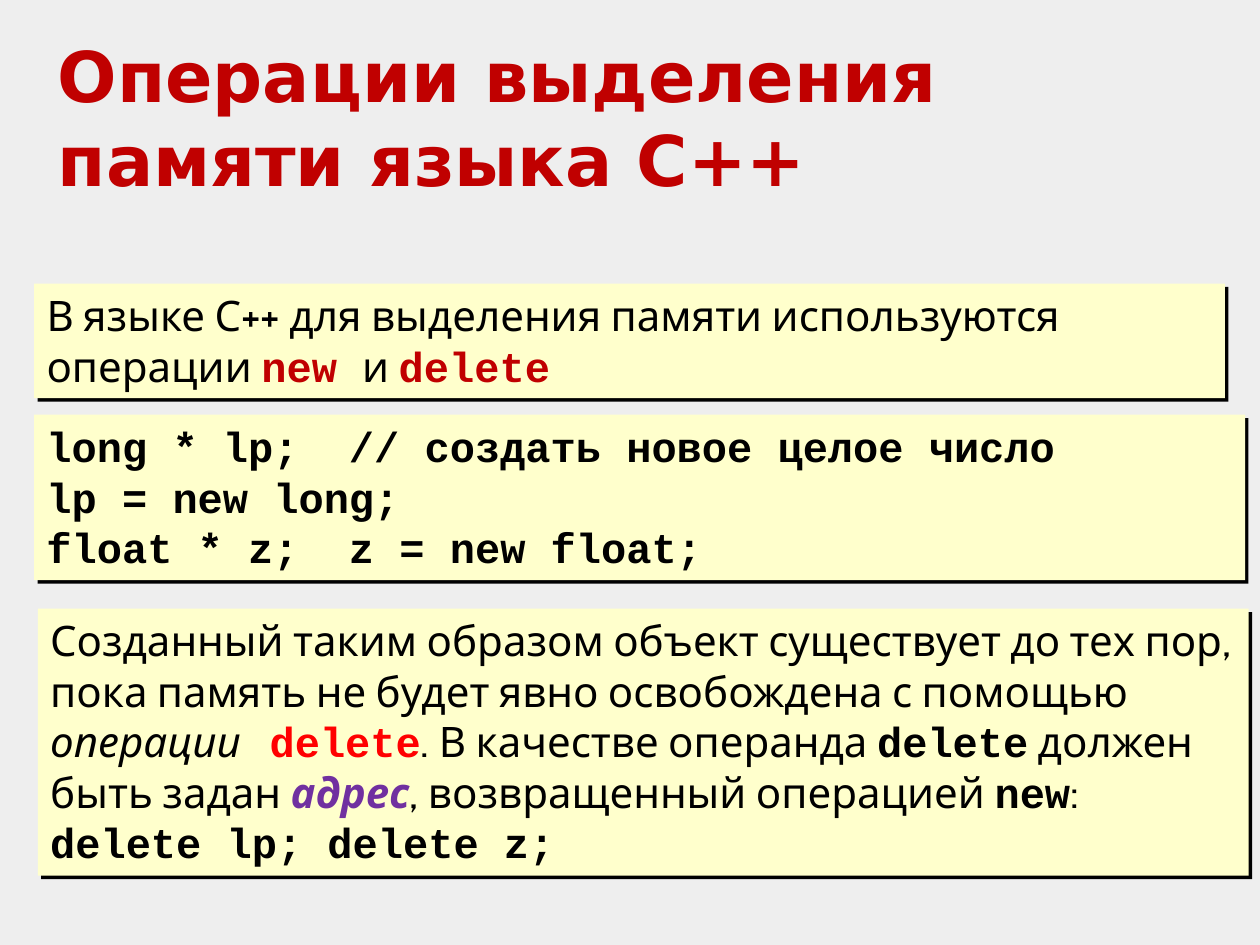
import pptx
import pptx.dml.color
import pptx.enum.shapes
import pptx.enum.text
import pptx.util
from lxml import etree

Pt = pptx.util.Pt
DRAWING = "http://schemas.openxmlformats.org/drawingml/2006/main"

BODY = dict(font="Cabin")
ITALIC = dict(font="Cabin", italic=True)
TERM = dict(font="Cabin", bold=True, italic=True, color="7030A0")
CODE = dict(font="Courier New", bold=True)
RED_CODE = dict(CODE, color="C00000")
BRIGHT_CODE = dict(CODE, color="FF0000")
HEADING = dict(font="DejaVu Sans", bold=True, color="C00000", size=40)

INTRO = [[
    ("В языке С++ для выделения памяти используются операции ", BODY),
    ("new ", RED_CODE),
    ("и ", BODY),
    ("delete", RED_CODE),
]]
ALLOCATION = [
    [("long * lp;  // создать новое целое число", CODE)],
    [("lp = new long;", CODE)],
    [("float * z;  z = new float;", CODE)],
]
RELEASE = [
    [
        ("Созданный таким образом объект существует до тех пор, пока память "
         "не будет явно освобождена с помощью ", BODY),
        ("операции   ", ITALIC),
        ("delete", BRIGHT_CODE),
        (". В качестве операнда ", BODY),
        ("delete", CODE),
        (" должен быть задан ", BODY),
        ("адрес", TERM),
        (", возвращенный операцией ", BODY),
        ("new", CODE),
        (":", BODY),
    ],
    [("delete lp; delete z;", CODE)],
]


def rgb(hex_color):
    return pptx.dml.color.RGBColor.from_string(hex_color)


def add_run(paragraph, text, font, size=24, color="000000", bold=False, italic=False):
    run = paragraph.add_run()
    run.text = text
    run.font.name = font
    run.font.size = Pt(size)
    run.font.bold = bold
    run.font.italic = italic
    run.font.color.rgb = rgb(color)


def write(frame, paragraphs):
    frame.word_wrap = True
    frame.auto_size = pptx.enum.text.MSO_AUTO_SIZE.SHAPE_TO_FIT_TEXT
    frame.vertical_anchor = pptx.enum.text.MSO_ANCHOR.TOP
    for index, runs in enumerate(paragraphs):
        paragraph = frame.paragraphs[0] if index == 0 else frame.add_paragraph()
        paragraph.alignment = pptx.enum.text.PP_ALIGN.LEFT
        for text, style in runs:
            add_run(paragraph, text, **style)


def add_hard_shadow(panel):
    panel.shadow.inherit = False
    effects = panel.fill._xPr.find(f"{{{DRAWING}}}effectLst")
    shadow = etree.SubElement(
        effects, f"{{{DRAWING}}}outerShdw",
        dist=str(Pt(2.8)), dir=str(45 * 60000), algn="ctr", rotWithShape="0")
    etree.SubElement(shadow, f"{{{DRAWING}}}srgbClr", val="000000")


def add_title(slide, left, top, width, height):
    title = slide.shapes.add_textbox(Pt(left), Pt(top), Pt(width), Pt(height))
    write(title.text_frame, [[("Операции выделения памяти языка C++", HEADING)]])


def add_panel(slide, left, top, width, height, paragraphs):
    panel = slide.shapes.add_shape(
        pptx.enum.shapes.MSO_SHAPE.RECTANGLE, Pt(left), Pt(top), Pt(width), Pt(height))
    panel.fill.solid()
    panel.fill.fore_color.rgb = rgb("FFFFCC")
    panel.line.fill.background()
    add_hard_shadow(panel)
    write(panel.text_frame, paragraphs)


def main():
    deck = pptx.Presentation()
    deck.slide_width, deck.slide_height = Pt(720), Pt(540)
    slide = deck.slides.add_slide(deck.slide_layouts[6])
    slide.background.fill.solid()
    slide.background.fill.fore_color.rgb = rgb("EEEEEE")

    add_title(slide, 26, 15, 668, 104.5)
    add_panel(slide, 19.5, 162, 680.5, 65.5, INTRO)
    add_panel(slide, 19.5, 237, 692, 94.5, ALLOCATION)
    add_panel(slide, 21.6, 347.8, 692, 152.6, RELEASE)
    deck.save("out.pptx")


if __name__ == "__main__":
    main()
